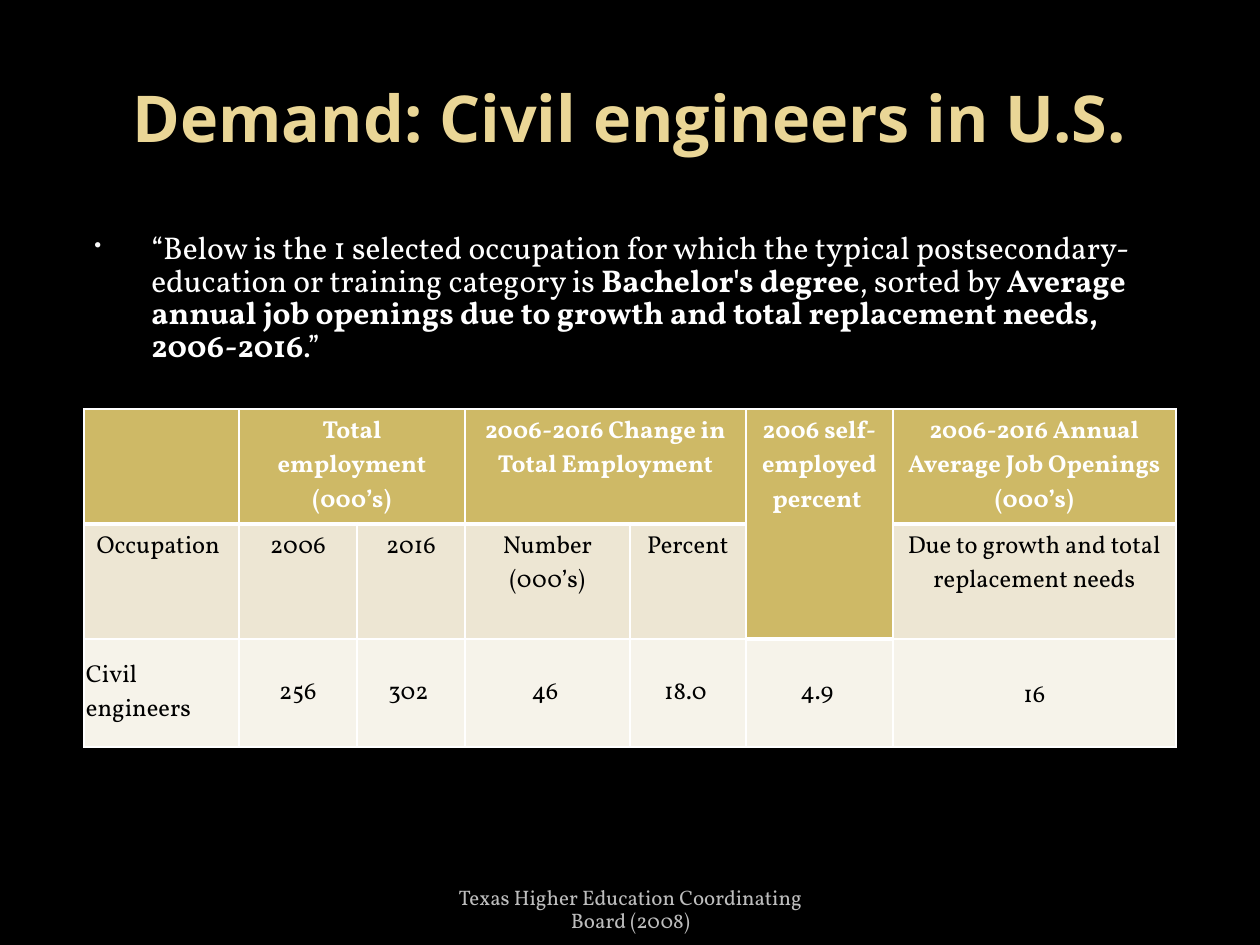
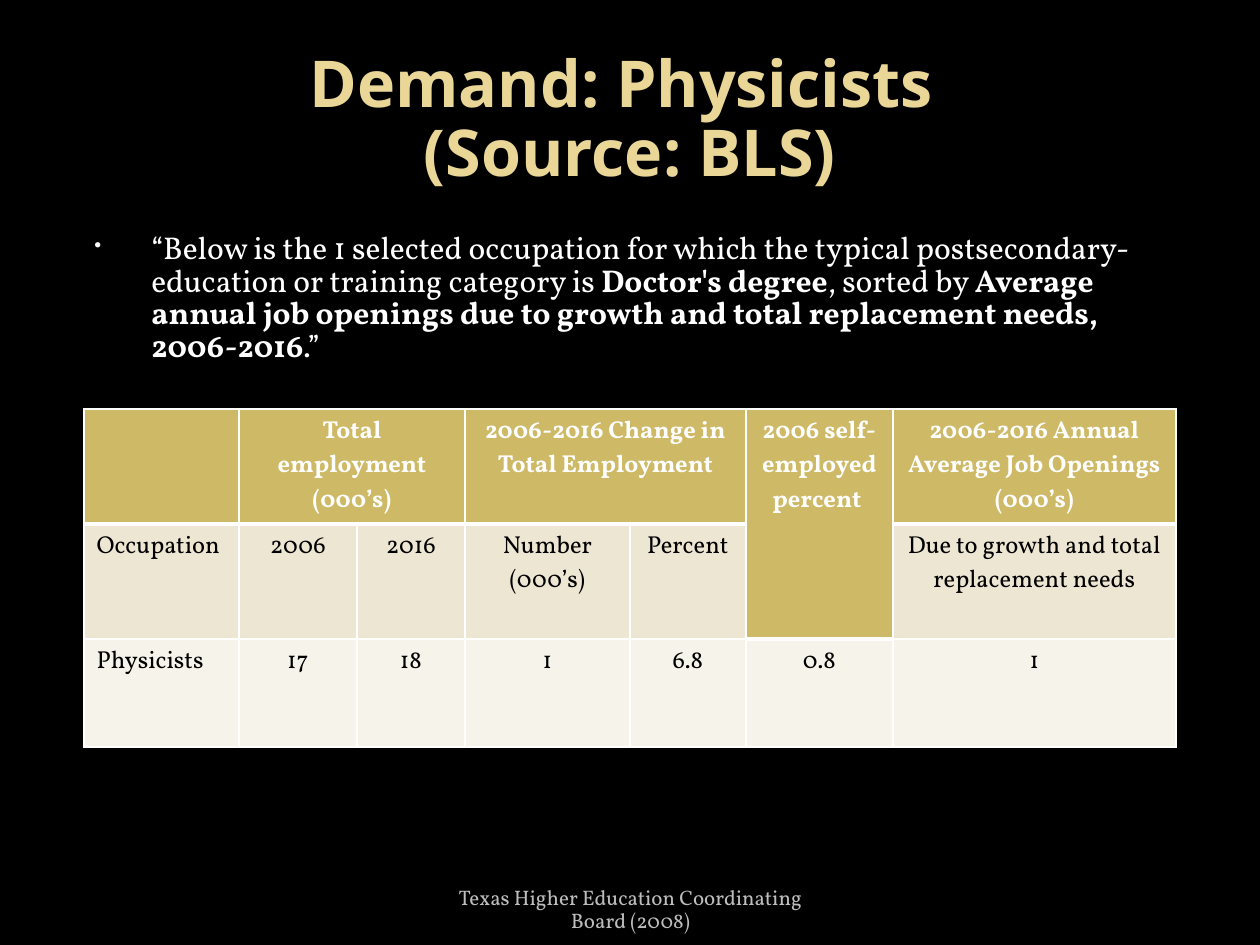
import pptx
import pptx.dml.color
import pptx.enum.text
import pptx.oxml
import pptx.oxml.ns
import pptx.util

HEAD, BODY = "Open Sans", "Vollkorn"
BLACK, WHITE, GREY = "000000", "FFFFFF", "BDBDBD"
SAND, GOLD, CREAM, IVORY = "EAD696", "CEB966", "EDE6D3", "F6F3EA"

ALIGN = pptx.enum.text.PP_ALIGN
ANCHOR = pptx.enum.text.MSO_ANCHOR

TITLE_BOX = (63, 38, 1134, 157)
QUOTE_BOX = (63, 220, 1134, 649)
TABLE_BOX = (84, 409, 1092, 338)
FOOT_BOX = (431, 885, 399, 50)

COLS = [155, 118, 108, 165, 116, 147, 283]
ROWS = [115, 115, 108]
SPANS = [((0, 1), (0, 2)), ((0, 3), (0, 4)), ((0, 5), (1, 5))]
TOTAL, SELF = 1, 5
HEADS = [
    ["", "Total employment\n(000’s)", None, "2006-2016 Change in Total Employment", None,
     "2006 self-employed percent ", "2006-2016 Annual Average Job Openings (000’s)"],
    ["Occupation", "2006", "2016", "Number (000’s)", "Percent", None,
     "Due to growth and total replacement needs"],
]


def px(count):
    return round(count * 914400 / 126)


def rgb(code):
    return pptx.dml.color.RGBColor.from_string(code)


def style(para, face, size, color, bold=False, align=ALIGN.LEFT):
    font = para.font
    font.name, font.size, font.bold = face, pptx.util.Pt(size), bold
    font.color.rgb = rgb(color)
    para.alignment = align


def add_box(slide, box, anchor=ANCHOR.TOP, top=6, base=6):
    frame = slide.shapes.add_textbox(*map(px, box)).text_frame
    frame.word_wrap = True
    frame.vertical_anchor = anchor
    frame.margin_top, frame.margin_bottom = px(top), px(base)
    return frame


def add_title(slide, box, text):
    frame = add_box(slide, box, ANCHOR.MIDDLE)
    frame.text = text
    for para in frame.paragraphs:
        style(para, HEAD, 36.9, SAND, True, ALIGN.CENTER)
    for para in frame.paragraphs[1:]:
        para.line_spacing = 0.9


def add_bullet(para):
    props = para._p.get_or_add_pPr()
    props.set("marL", str(px(76)))
    props.set("indent", str(px(-57)))
    space = pptx.oxml.ns.nsdecls("a")
    for part in (f'<a:buClr {space}><a:srgbClr val="F9F9F9"/></a:buClr>',
                 f'<a:buSzPct {space} val="65000"/>',
                 f'<a:buChar {space} char="•"/>'):
        props.append(pptx.oxml.parse_xml(part))


def add_quote(slide, box, degree):
    para = add_box(slide, box, top=14).paragraphs[0]
    para.line_spacing = 0.86
    add_bullet(para)
    style(para, BODY, 18, WHITE)
    parts = [
        "“Below is the 1 selected occupation for which the typical "
        "postsecondary-education or training category is ",
        degree,
        ", sorted by ",
        "Average annual job openings due to growth and total replacement needs, 2006-2016",
        ".”",
    ]
    for index, text in enumerate(parts):
        run = para.add_run()
        run.text = text
        run.font.bold = index % 2 == 1


def add_foot(slide, box):
    frame = add_box(slide, box, ANCHOR.BOTTOM, 0, 2)
    frame.text = "Texas Higher Education Coordinating Board (2008)"
    para = frame.paragraphs[0]
    style(para, BODY, 12, GREY, align=ALIGN.CENTER)
    para.line_spacing = 0.9


def is_head(row, col):
    return row == 0 or (row == 1 and col == SELF)


def add_edges(cell, row, col):
    """Draw white cell borders, thick below the header cells."""
    props = cell._tc.get_or_add_tcPr()
    above = row > 0 and is_head(row - 1, col)
    widths = {"L": 1, "R": 1, "T": 3 if above else 1, "B": 3 if is_head(row, col) else 1}
    for side, width in widths.items():
        props.append(pptx.oxml.parse_xml(
            f'<a:ln{side} {pptx.oxml.ns.nsdecls("a")} w="{pptx.util.Pt(width)}">'
            f'<a:solidFill><a:srgbClr val="{WHITE}"/></a:solidFill></a:ln{side}>'))


def fill_cell(cell, row, col, text):
    head = is_head(row, col)
    add_edges(cell, row, col)
    cell.fill.solid()
    cell.fill.fore_color.rgb = rgb(GOLD if head else (CREAM if row == 1 else IVORY))
    if text is None:
        return
    cell.text = text
    for para in cell.text_frame.paragraphs:
        style(para, BODY, 14, WHITE if head else BLACK, head,
              ALIGN.CENTER if col else ALIGN.LEFT)


def set_tight(table):
    """Centre the last row with thin margins, and lower its final value."""
    *cells, last = table.rows[2].cells
    for cell in cells:
        cell.vertical_anchor = ANCHOR.MIDDLE
        cell.margin_left = cell.margin_right = px(2)
        cell.margin_top = cell.margin_bottom = px(2)
    last.margin_top = px(40)


def add_grid(slide, box, values, tight):
    table = slide.shapes.add_table(len(ROWS), len(COLS), *map(px, box)).table
    table.first_row = table.horz_banding = False
    for col, width in zip(table.columns, COLS):
        col.width = px(width)
    for row, height in zip(table.rows, ROWS):
        row.height = px(height)
    for start, end in SPANS:
        table.cell(*start).merge(table.cell(*end))
    for row, texts in enumerate(HEADS + [values]):
        for col, text in enumerate(texts):
            fill_cell(table.cell(row, col), row, col, text)
    if tight:
        set_tight(table)


def add_demand(deck, title, degree, values, tight=False):
    slide = deck.slides.add_slide(deck.slide_layouts[6])
    slide.background.fill.solid()
    slide.background.fill.fore_color.rgb = rgb(BLACK)
    add_title(slide, TITLE_BOX, title)
    add_quote(slide, QUOTE_BOX, degree)
    add_foot(slide, FOOT_BOX)
    add_grid(slide, TABLE_BOX, values, tight)


def main():
    deck = pptx.Presentation()
    deck.slide_width, deck.slide_height = px(1260), px(945)
    add_demand(deck, "Demand: Civil engineers in U.S.", "Bachelor's degree",
               ["Civil engineers", "256", "302 ", "46 ", "18.0 ", "4.9 ", "16"], tight=True)
    add_demand(deck, "Demand: Physicists \n(Source: BLS)", "Doctor's degree",
               ["Physicists", "17", "18", "1", "6.8", "0.8", "1"])
    deck.save("out.pptx")


if __name__ == "__main__":
    main()
